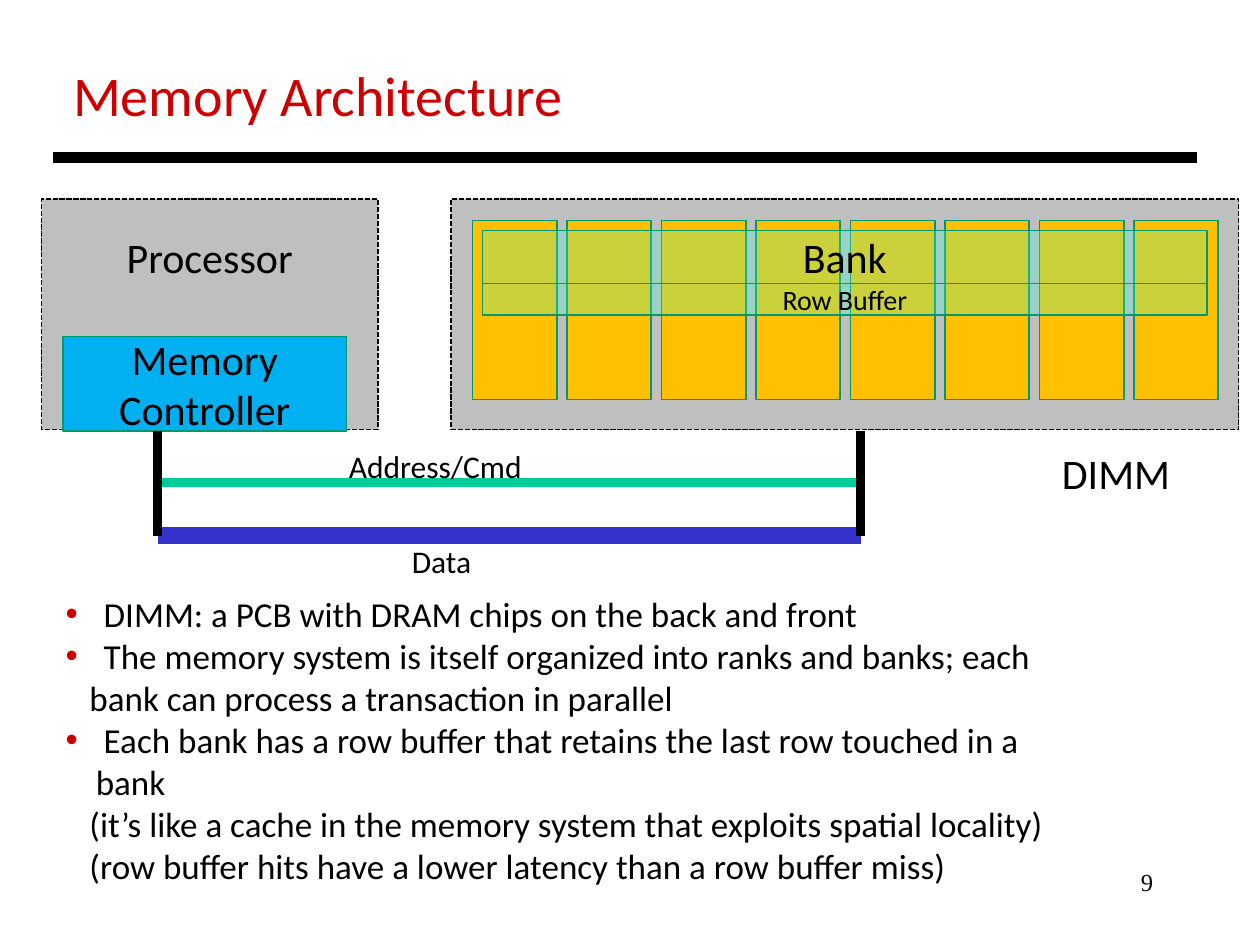
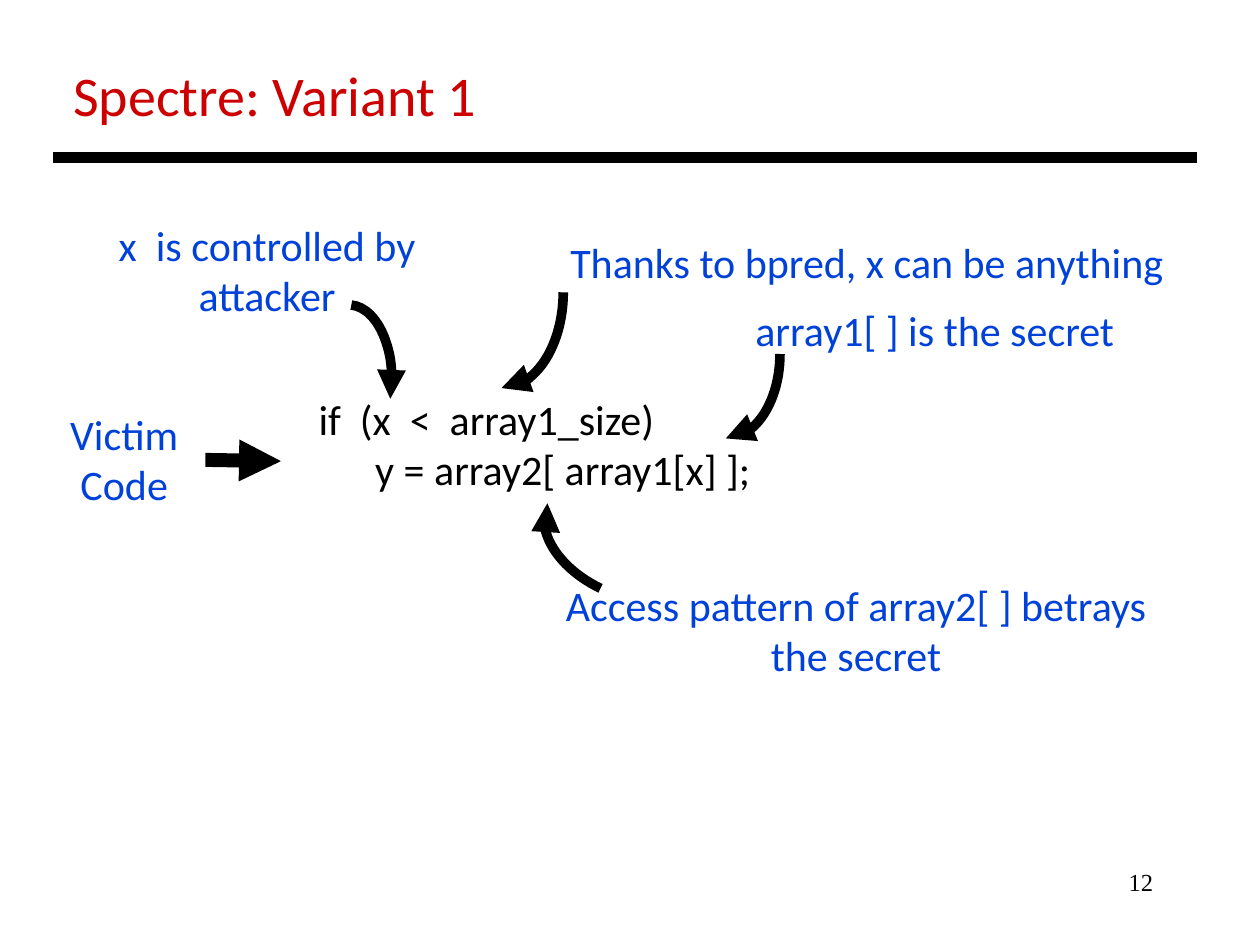
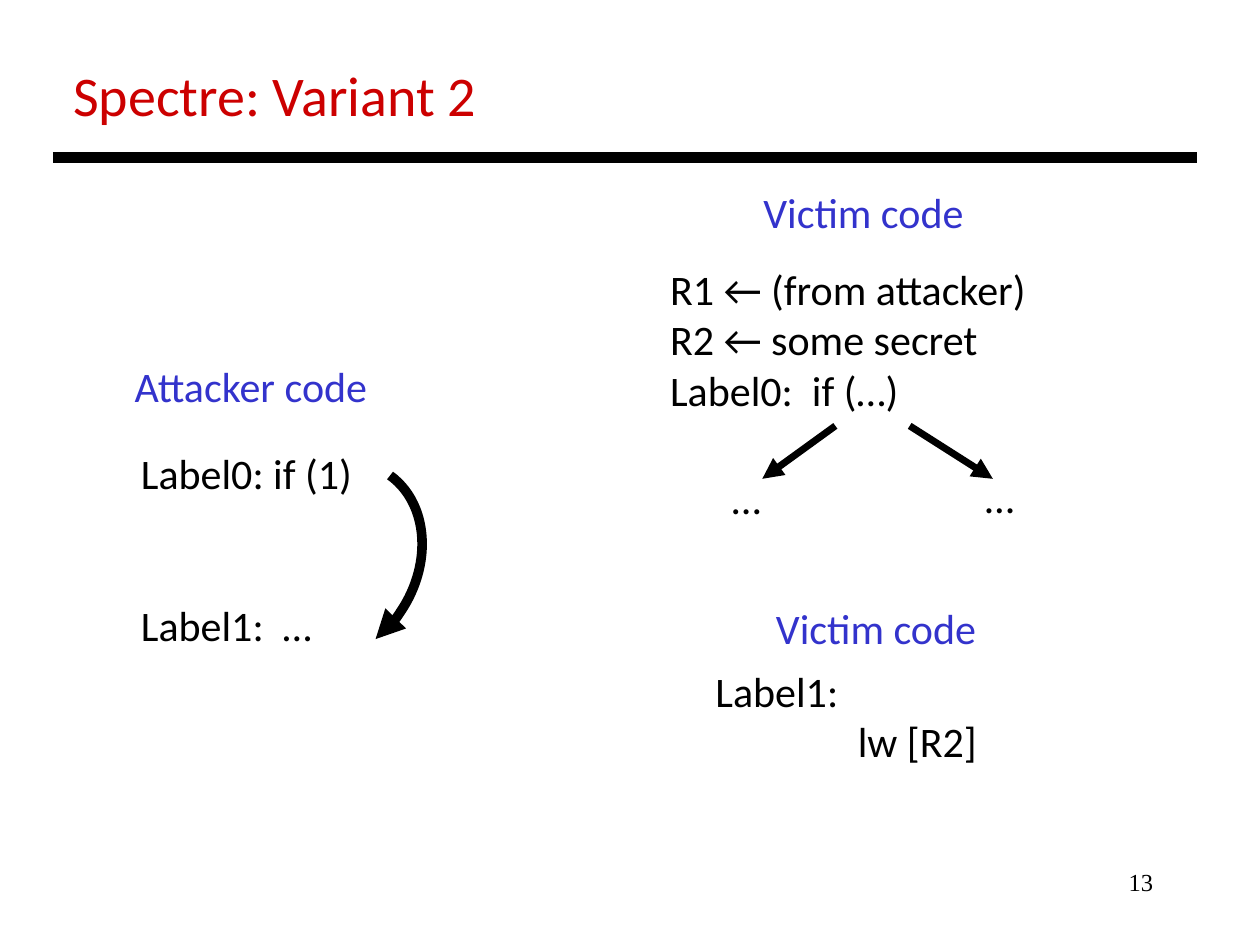
from lxml import etree
from pptx import Presentation
from pptx.dml.color import RGBColor
from pptx.enum.dml import MSO_LINE
from pptx.enum.shapes import MSO_CONNECTOR, MSO_SHAPE
from pptx.enum.text import MSO_ANCHOR, MSO_AUTO_SIZE, PP_ALIGN
from pptx.oxml.ns import qn
from pptx.util import Inches, Pt

LEFT, CENTER, RIGHT = PP_ALIGN.LEFT, PP_ALIGN.CENTER, PP_ALIGN.RIGHT
TOP, MIDDLE = MSO_ANCHOR.TOP, MSO_ANCHOR.MIDDLE
RECT, ARC = MSO_SHAPE.RECTANGLE, MSO_SHAPE.ARC
STRAIGHT = MSO_CONNECTOR.STRAIGHT
SHORT_DASH = MSO_LINE.SQUARE_DOT
NO_FIT = MSO_AUTO_SIZE.NONE
LAYOUT_BULLETS, LAYOUT_TITLE_ONLY = 1, 5
FONT, NUMBER_FONT = "Calibri", "Times New Roman"

COLORS = {
    "black": "000000", "title": "CC0000", "note": "0041DA", "heading": "3333CC",
    "chip": "BFBFBF", "controller": "00B0F0", "bank": "FFC000", "row": "47FFD1",
    "edge": "009771", "address": "00CC99", "data": "3333CC",
}

# Text, whether it is bulleted
MEMORY_POINTS = [
    (" DIMM: a PCB with DRAM chips on the back and front", True),
    (" The memory system is itself organized into ranks and banks; each", True),
    ("bank can process a transaction in parallel", False),
    (" Each bank has a row buffer that retains the last row touched in a bank", True),
    ("(it’s like a cache in the memory system that exploits spatial locality)", False),
    ("(row buffer hits have a lower latency than a row buffer miss)", False),
]
BANK_COUNT, BANK_PITCH = 8, 0.75
BUS_LEFT, BUS_RIGHT, BUS_TOP, BUS_BOTTOM = 1.25, 6.83, 3.42, 4.25
# Start, end, colour, width
BUS_LINES = [
    ((BUS_LEFT, 3.83), (BUS_RIGHT, 3.83), "address", 5),
    ((BUS_LEFT, BUS_BOTTOM), (BUS_RIGHT, BUS_BOTTOM), "data", 10),
    ((BUS_LEFT, BUS_TOP), (BUS_LEFT, BUS_BOTTOM), "black", 5),
    ((BUS_RIGHT, BUS_TOP), (BUS_RIGHT, BUS_BOTTOM), "black", 5),
]
# Text, box, size
MEMORY_LABELS = [
    ("Address/Cmd", (2.67, 3.5, 1.59, 0.4), 18),
    ("Data", (3.17, 4.25, 0.68, 0.4), 18),
    ("DIMM", (8.33, 3.5, 1.1, 0.51), 24),
]
# Text, box, size
ROW_PARTS = [
    ("Bank", (3.83, 1.83, 5.75, 0.42), 24),
    ("Row Buffer", (3.83, 2.25, 5.75, 0.25), 16),
]

VARIANT_1_NOTES = [
    ("Victim Code", (0.34, 3.19, 1.29, 0.91)),
    ("x  is controlled by attacker", (0.65, 1.69, 2.94, 0.91)),
    ("array1[ ] is the secret", (5.3, 2.37, 4.24, 0.51)),
    ("Access pattern of array2[ ] betrays the secret", (4.21, 4.55, 5.17, 0.91)),
    ("Thanks to bpred, x can be anything", (3.39, 1.83, 6.98, 0.51)),
]
WIDE_SWEEP = (163.09, 15.18)
# Box, rotation, sweep (None for a quarter turn)
VARIANT_1_ARCS = [
    ((2.43, 2.42, 0.68, 1.18), 0, WIDE_SWEEP),
    ((5.09, 2.38, 1.34, 0.86), 90, None),
    ((4.28, 3.85, 1.34, 0.86), 205.3, None),
    ((3.22, 1.83, 1.52, 0.98), 90, None),
]

VARIANT_2_HEADINGS = [
    ("Victim code", (5.96, 1.43, 1.88, 0.5)),
    ("Victim code", (6.06, 4.73, 1.88, 0.5)),
    ("Attacker code", (0.97, 2.81, 2.15, 0.5)),
]
VARIANT_2_CODE = [
    (["R1 ← (from attacker)", "R2 ← some secret", "Label0:  if (…)"],
     (5.22, 2.04, 3.08, 1.31)),
    (["…"], (5.71, 3.7, 0.51, 0.5)),
    (["…"], (7.72, 3.69, 0.51, 0.5)),
]
BRANCHES = [((6.63, 3.38), (6.05, 3.8)), ((7.22, 3.38), (7.88, 3.8))]


def rgb(name):
    return RGBColor.from_string(COLORS[name])


def inches(box):
    return [Inches(length) for length in box]


def add_run(paragraph, text, size, color="black", font=FONT):
    run = paragraph.add_run()
    run.text = text
    run.font.size, run.font.name = Pt(size), font
    run.font.color.rgb = rgb(color)


def set_indent(paragraph, margin, first_line=0):
    properties = paragraph._p.get_or_add_pPr()
    properties.set("marL", str(Inches(margin)))
    properties.set("indent", str(Inches(first_line)))
    return properties


def fill_text(shape, lines, size, color="black", align=LEFT, anchor=TOP, font=FONT):
    """Write one paragraph per line and return the paragraphs."""
    frame = shape.text_frame
    frame.word_wrap, frame.auto_size = True, NO_FIT
    frame.vertical_anchor = anchor
    for index, line in enumerate(lines):
        paragraph = frame.add_paragraph() if index else frame.paragraphs[0]
        paragraph.alignment = align
        add_run(paragraph, line, size, color, font)
    return frame.paragraphs


def add_label(slide, lines, box, size=24, color="black", align=LEFT, font=FONT):
    label = slide.shapes.add_textbox(*inches(box))
    return fill_text(label, lines, size, color, align, font=font)


def add_block(slide, box, fill, edge="edge", text=None, size=24, dash=None):
    block = slide.shapes.add_shape(RECT, *inches(box))
    block.shadow.inherit = False
    block.fill.solid()
    block.fill.fore_color.rgb = rgb(fill)
    block.line.color.rgb = rgb(edge)
    block.line.width = Pt(1)
    if dash:
        block.line.dash_style = dash
    if text:
        fill_text(block, [text], size, align=CENTER, anchor=MIDDLE)
    return block


def style_stroke(line, color, width, arrow):
    line.color.rgb = rgb(color)
    line.width = Pt(width)
    if arrow:
        etree.SubElement(line._get_or_add_ln(), qn("a:tailEnd"), type="triangle")


def add_line(slide, start, end, width, color="black", arrow=False):
    line = slide.shapes.add_connector(STRAIGHT, *inches(start + end))
    style_stroke(line.line, color, width, arrow)
    etree.SubElement(line._element.spPr, qn("a:effectLst"))


def add_arc_arrow(slide, box, rotation, sweep=None):
    arc = slide.shapes.add_shape(ARC, *inches(box))
    if sweep:
        arc.adjustments[0], arc.adjustments[1] = sweep
    arc.rotation = rotation
    arc.fill.background()
    style_stroke(arc.line, "black", 5.5, True)
    arc.shadow.inherit = False


def place(shape, box):
    shape.left, shape.top, shape.width, shape.height = inches(box)


def add_slide(deck, title, number, layout=LAYOUT_TITLE_ONLY):
    """Start a slide with its title, rule and page number."""
    slide = deck.slides.add_slide(deck.slide_layouts[layout])
    place(slide.shapes.title, (0.48, 0.43, 9, 0.64))
    fill_text(slide.shapes.title, [title], 32, "title")
    add_line(slide, (0.42, 1.25), (9.5, 1.25), 6)
    add_label(slide, [str(number)], (7.17, 6.83, 2.08, 0.5), 14,
              align=RIGHT, font=NUMBER_FONT)
    return slide


def add_points(slide):
    body = slide.placeholders[1]
    place(body, (0.42, 4.65, 8.3, 2.12))
    paragraphs = fill_text(body, [text for text, _ in MEMORY_POINTS], 20)
    for paragraph, (_, bulleted) in zip(paragraphs, MEMORY_POINTS):
        paragraph.space_before = Pt(0)
        if bulleted:
            properties = set_indent(paragraph, 0.24, -0.24)
            bullet_color = etree.SubElement(properties, qn("a:buClr"))
            etree.SubElement(bullet_color, qn("a:srgbClr"), val=COLORS["title"])
            etree.SubElement(properties, qn("a:buChar"), char="•")
        else:
            etree.SubElement(set_indent(paragraph, 0.19), qn("a:buNone"))


def build_memory(deck):
    slide = add_slide(deck, "Memory Architecture", 9, LAYOUT_BULLETS)
    processor = add_block(slide, (0.33, 1.58, 2.67, 1.83), "chip", "black",
                          "Processor", dash=SHORT_DASH)
    processor.text_frame.margin_bottom = Inches(0.97)
    add_block(slide, (0.5, 2.67, 2.25, 0.75), "controller", text="Memory Controller")
    add_block(slide, (3.58, 1.58, 6.25, 1.83), "chip", "black", dash=SHORT_DASH)
    for bank in range(BANK_COUNT):
        add_block(slide, (3.75 + bank * BANK_PITCH, 1.75, 0.67, 1.42), "bank")
    for start, end, color, width in BUS_LINES:
        add_line(slide, start, end, width, color)
    for text, box, size in MEMORY_LABELS:
        add_label(slide, [text], box, size)
    for text, box, size in ROW_PARTS:
        row = add_block(slide, box, "row", text=text, size=size)
        row_color = row._element.spPr.find(qn("a:solidFill"))[0]
        etree.SubElement(row_color, qn("a:alpha"), val="28000")
    add_points(slide)


def build_variant_1(deck):
    slide = add_slide(deck, "Spectre: Variant 1", 12)
    code = add_label(slide, ["if  (x  <  array1_size)", "y = array2[ array1[x] ];"],
                     (2.43, 3.07, 3.8, 0.91))
    set_indent(code[1], 0.45)
    for text, box in VARIANT_1_NOTES:
        add_label(slide, [text], box, color="note", align=CENTER)
    add_line(slide, (1.63, 3.65), (2.23, 3.66), 8, arrow=True)
    for box, rotation, sweep in VARIANT_1_ARCS:
        add_arc_arrow(slide, box, rotation, sweep)


def build_variant_2(deck):
    slide = add_slide(deck, "Spectre: Variant 2", 13)
    for text, box in VARIANT_2_HEADINGS:
        add_label(slide, [text], box, color="heading")
    for lines, box in VARIANT_2_CODE:
        add_label(slide, lines, box)
    for start, end in BRANCHES:
        add_line(slide, start, end, 4, arrow=True)
    gadget = add_label(slide, ["Label1:", "lw [R2]"], (5.58, 5.23, 2.4, 0.91))
    set_indent(gadget[1], 1.13)
    attack = add_label(slide, ["Label0: if (1)", "Label1:  …"], (1.02, 3.5, 1.89, 1.72))
    attack[1].space_before = Pt(58)
    add_arc_arrow(slide, (1.92, 3.62, 1.38, 1.69), 33.3, WIDE_SWEEP)


def main():
    deck = Presentation()
    deck.slide_width, deck.slide_height = Inches(10), Inches(7.5)
    build_memory(deck)
    build_variant_1(deck)
    build_variant_2(deck)
    deck.save("out.pptx")


if __name__ == "__main__":
    main()
